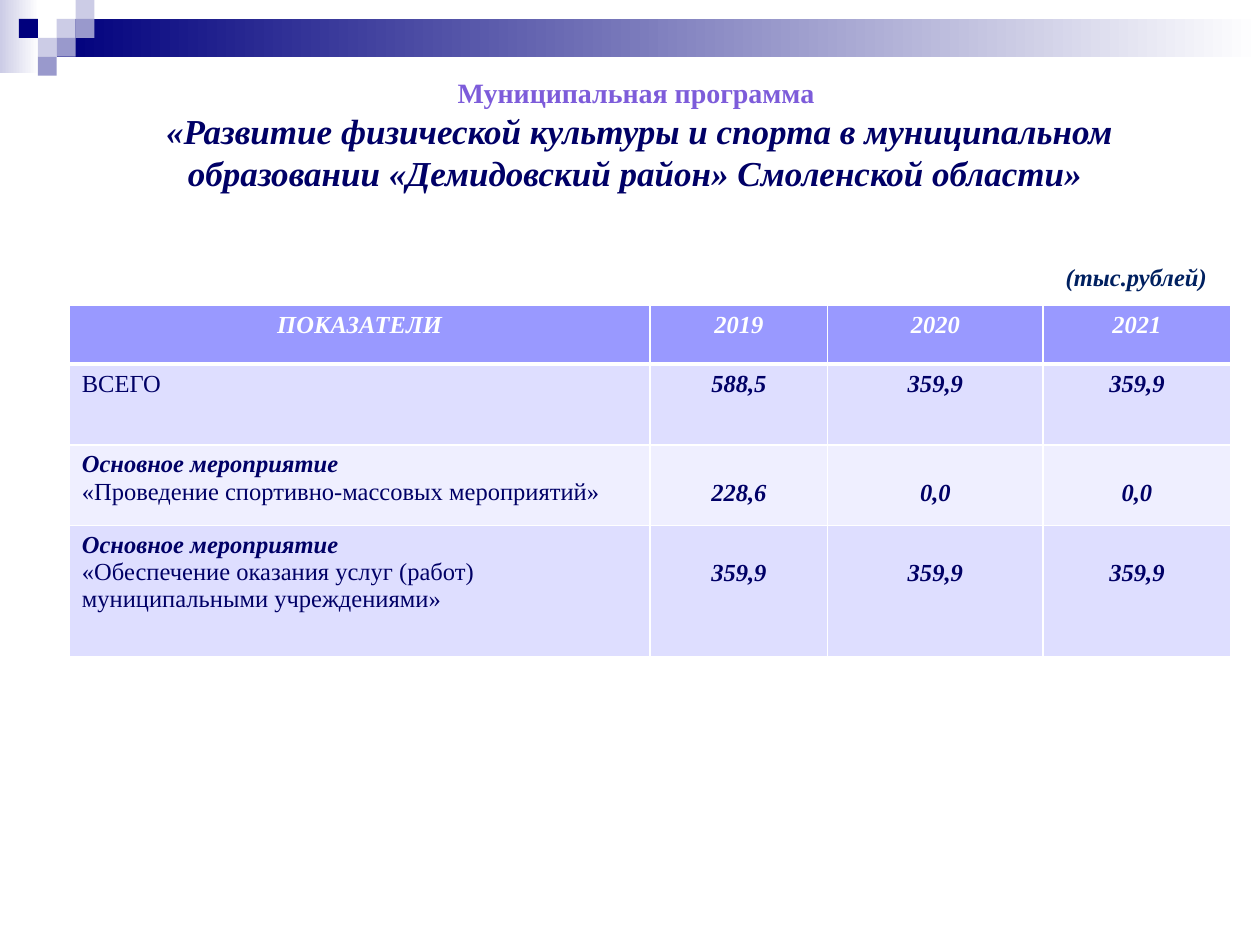
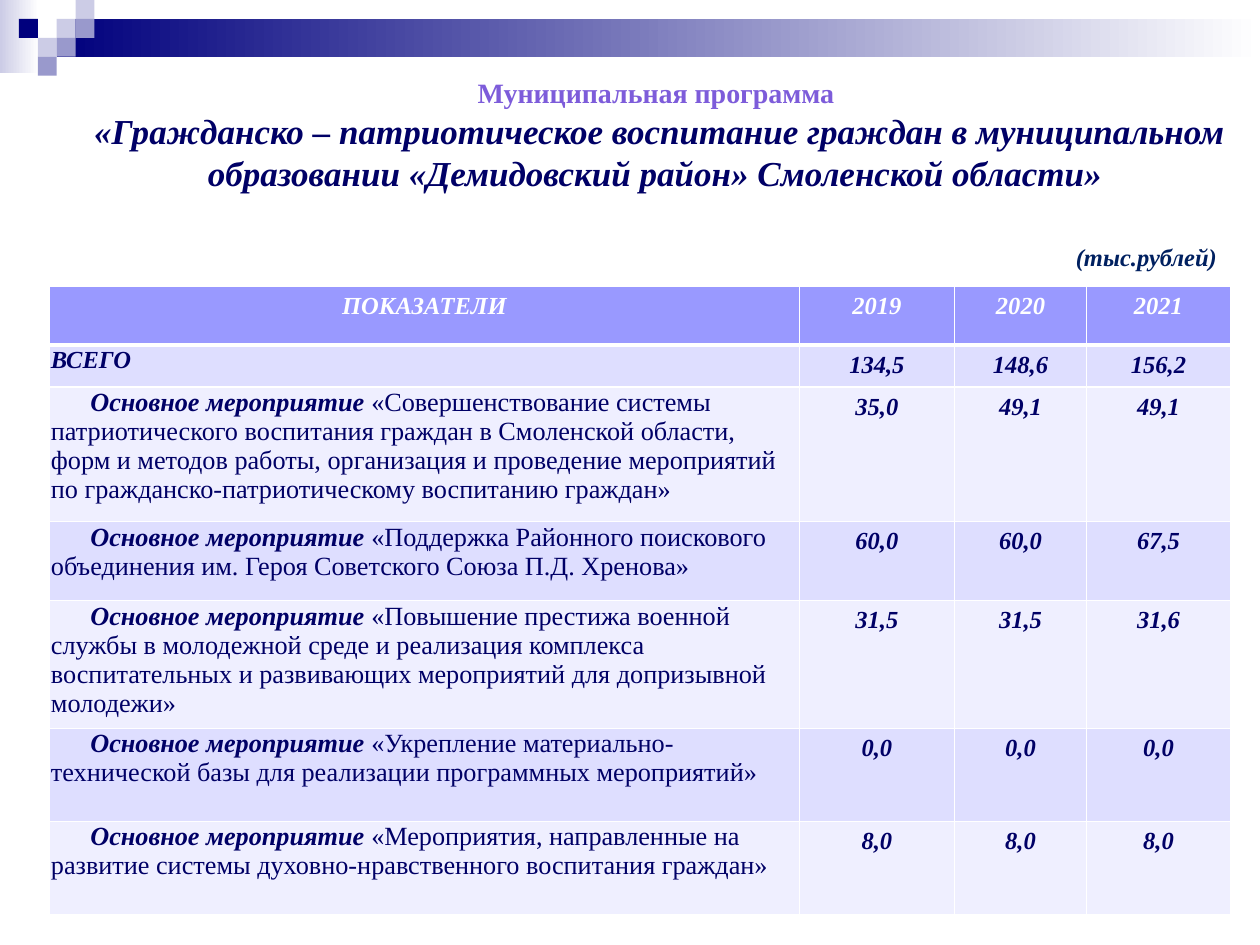
from lxml.etree import SubElement
from pptx import Presentation
from pptx.dml.color import RGBColor
from pptx.enum.shapes import MSO_SHAPE as Preset
from pptx.enum.text import MSO_AUTO_SIZE as AutoSize, PP_ALIGN as Align
from pptx.oxml.ns import qn
from pptx.util import Pt

NAVY = RGBColor(0x00, 0x00, 0x7D)
INK = RGBColor(0x00, 0x00, 0x66)
UNIT_INK = RGBColor(0x00, 0x20, 0x60)
VIOLET = RGBColor(0x7D, 0x5C, 0xDA)
PALE = RGBColor(0xCC, 0xCC, 0xE6)
MID = RGBColor(0x99, 0x99, 0xCC)
HEADER = RGBColor(0x99, 0x99, 0xFF)
BAND_DARK = RGBColor(0xDE, 0xDE, 0xFF)
BAND_LIGHT = RGBColor(0xEF, 0xEF, 0xFF)
WHITE = RGBColor(0xFF, 0xFF, 0xFF)
FONT = "Times New Roman"
SQUARE = 10.8
SQUARES = [(3, 1, PALE), (4, 0, PALE), (4, 1, MID), (2, 2, PALE),
           (1, 1, NAVY), (3, 2, MID), (2, 3, MID)]
HEADINGS = ["ПОКАЗАТЕЛИ", "2019", "2020", "2021"]
EVENT = "Основное мероприятие"
NARROW_MARGINS = (0.72, 0.72, 0.72, 0)
CELL_MARGINS = (7.2, 3.6, 7.2, 3.6)
LOWERED_MARGINS = (7.2, 19.7, 7.2, 3.6)


def add_span(para, text, size=14, color=INK, bold=True, italic=True):
    """Append one formatted run to a paragraph."""
    span = para.add_run()
    span.text = text
    font = span.font
    font.name, font.size, font.bold, font.italic = FONT, Pt(size), bold, italic
    font.color.rgb = color


def add_block(page, left, top, width, height, color, fade=False):
    """Draw a borderless rectangle, optionally fading to white on the right."""
    block = page.shapes.add_shape(Preset.RECTANGLE, Pt(left), Pt(top), Pt(width), Pt(height))
    block.shadow.inherit = False
    block.line.fill.background()
    if fade:
        block.fill.gradient()
        block.fill.gradient_angle = 0
        for stop, shade in zip(block.fill.gradient_stops, (color, WHITE)):
            stop.color.rgb = shade
    else:
        block.fill.solid()
        block.fill.fore_color.rgb = color


def add_banner(page):
    """Draw the fading bands and the mosaic of squares at the top."""
    add_block(page, 0, 0, 22.3, 41.8, PALE, fade=True)
    add_block(page, 3 * SQUARE, SQUARE, 720 - 3 * SQUARE, 2 * SQUARE, NAVY, fade=True)
    for column, row, color in SQUARES:
        add_block(page, column * SQUARE, row * SQUARE, SQUARE, SQUARE, color)


def add_text_box(page, left, top, width, height, wrap):
    """Add an empty text box and return its frame."""
    frame = page.shapes.add_textbox(Pt(left), Pt(top), Pt(width), Pt(height)).text_frame
    frame.word_wrap = wrap
    frame.auto_size = AutoSize.SHAPE_TO_FIT_TEXT
    return frame


def add_title(page, left, width, name):
    """Write the programme caption and its name, centred."""
    frame = add_text_box(page, left, 39.6, width, 74.9, True)
    caption, title = frame.paragraphs[0], frame.add_paragraph()
    caption.alignment = title.alignment = Align.CENTER
    add_span(caption, "Муниципальная программа ", size=16, color=VIOLET, italic=False)
    add_span(title, name, size=20)


def add_unit(page, left, top):
    """Write the unit note above the table."""
    frame = add_text_box(page, left, top, 95.8, 24.5, False)
    add_span(frame.paragraphs[0], "(тыс.рублей)", color=UNIT_INK)


def style_cell(cell, row, margins):
    """Set the borders, the fill and the margins of a cell."""
    props = cell._tc.get_or_add_tcPr()
    widths = {"lnL": 1, "lnR": 1, "lnT": 3 if row == 1 else 1, "lnB": 3 if row == 0 else 1}
    for edge, width in widths.items():
        line = SubElement(props, qn(f"a:{edge}"), w=str(Pt(width)))
        SubElement(SubElement(line, qn("a:solidFill")), qn("a:srgbClr"), val=str(WHITE))
    cell.fill.solid()
    cell.fill.fore_color.rgb = HEADER if row == 0 else BAND_DARK if row % 2 else BAND_LIGHT
    cell.margin_left, cell.margin_top, cell.margin_right, cell.margin_bottom = map(Pt, margins)


def add_budget(page, left, top, widths, heights, rows, write_label, label_margins, lowered):
    """Build the budget table, leaving the label column to write_label."""
    grid = page.shapes.add_table(len(heights), len(widths), Pt(left), Pt(top),
                                 Pt(sum(widths)), Pt(sum(heights))).table
    grid.first_row = grid.horz_banding = False
    for column, width in zip(grid.columns, widths):
        column.width = Pt(width)
    for line, height in zip(grid.rows, heights):
        line.height = Pt(height)
    for row, texts in enumerate([HEADINGS, *rows]):
        for column, text in enumerate(texts):
            cell = grid.cell(row, column)
            is_label = row > 0 and column == 0
            margins = CELL_MARGINS
            if is_label:
                margins = label_margins
            elif lowered and row > 1:
                margins = LOWERED_MARGINS
            style_cell(cell, row, margins)
            para = cell.text_frame.paragraphs[0]
            if is_label:
                write_label(cell.text_frame, text, row == 1)
            else:
                para.alignment = Align.CENTER
                add_span(para, text, color=INK if row else WHITE)


def write_stacked_label(frame, text, total):
    """Write the event heading on its own line above its name."""
    para = frame.paragraphs[0]
    if not total:
        add_span(para, EVENT)
        para = frame.add_paragraph()
    add_span(para, text, bold=False, italic=False)


def write_inline_label(frame, text, total):
    """Write the event heading and its name in one indented paragraph."""
    para = frame.paragraphs[0]
    if total:
        add_span(para, text)
        return
    para._p.get_or_add_pPr().set("indent", str(Pt(22.5)))
    add_span(para, EVENT + " ", size=15)
    add_span(para, text, size=15, bold=False, italic=False)


def build_sport_page(page):
    """Compose the physical culture and sport page."""
    add_banner(page)
    add_title(page, 56.2, 618.5, "«Развитие физической культуры и спорта в муниципальном "
              "образовании «Демидовский район» Смоленской области» ")
    rows = [
        ("ВСЕГО", "588,5", "359,9", "359,9"),
        ("«Проведение спортивно-массовых мероприятий»", "228,6", "0,0", "0,0"),
        ("«Обеспечение оказания услуг (работ) муниципальными учреждениями»",
         "359,9", "359,9", "359,9"),
    ]
    add_budget(page, 39.6, 174.3, [331.9, 101.5, 123.1, 107.3], [33.8, 46.1, 46.1, 74.9],
               rows, write_stacked_label, CELL_MARGINS, lowered=True)
    add_unit(page, 601.9, 146.2)


def build_patriotic_page(page):
    """Compose the civic and patriotic education page."""
    add_banner(page)
    add_title(page, 33.8, 686.2, "«Гражданско – патриотическое воспитание граждан в муниципальном "
              "образовании «Демидовский район» Смоленской области» ")
    rows = [
        ("ВСЕГО", "134,5", "148,6", "156,2"),
        ("«Совершенствование системы патриотического воспитания граждан в Смоленской области, "
         "форм и методов работы, организация и проведение мероприятий по "
         "гражданско-патриотическому воспитанию граждан»", "35,0", "49,1", "49,1"),
        ("«Поддержка Районного поискового объединения им. Героя Советского Союза П.Д. Хренова»",
         "60,0", "60,0", "67,5"),
        ("«Повышение престижа военной службы в молодежной среде и реализация комплекса "
         "воспитательных и развивающих мероприятий для допризывной молодежи»",
         "31,5", "31,5", "31,6"),
        ("«Укрепление материально-технической базы для реализации программных мероприятий»",
         "0,0", "0,0", "0,0"),
        ("«Мероприятия, направленные на развитие системы духовно-нравственного "
         "воспитания граждан»", "8,0", "8,0", "8,0"),
    ]
    add_budget(page, 28.4, 163.4, [428.4, 88.6, 75.6, 82.1],
               [33.8, 23.9, 76.8, 45.2, 73, 53.2, 53.2],
               rows, write_inline_label, NARROW_MARGINS, lowered=False)
    add_unit(page, 607.7, 134.6)


def main():
    """Build and save the deck."""
    deck = Presentation()
    deck.slide_width, deck.slide_height = Pt(720), Pt(540)
    for build_page in (build_sport_page, build_patriotic_page):
        build_page(deck.slides.add_slide(deck.slide_layouts[6]))
    deck.save("out.pptx")


if __name__ == "__main__":
    main()
